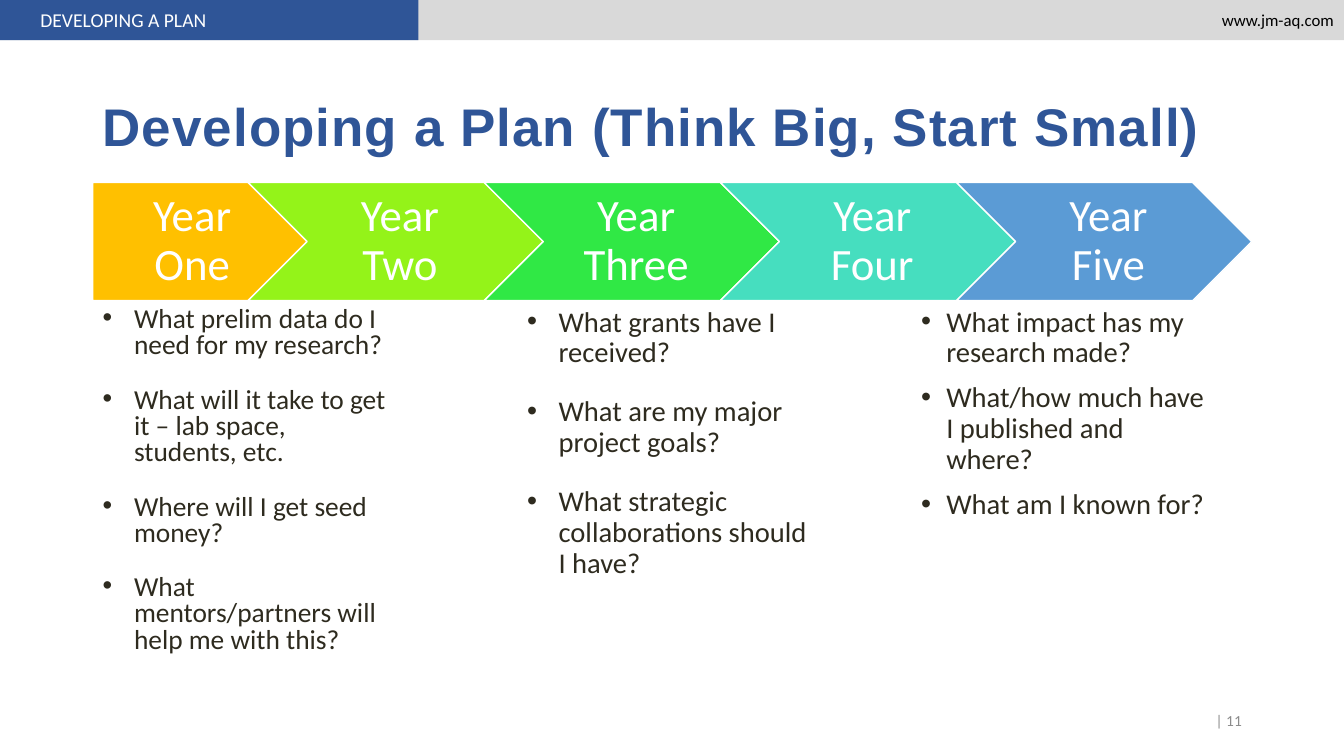
from lxml import etree
from pptx import Presentation
from pptx import util as u
from pptx.dml.color import RGBColor
from pptx.enum import shapes, text
from pptx.oxml.ns import qn

Pt = u.Pt
LEFT, RIGHT, CENTER = text.PP_ALIGN.LEFT, text.PP_ALIGN.RIGHT, text.PP_ALIGN.CENTER
TOP, MIDDLE = text.MSO_ANCHOR.TOP, text.MSO_ANCHOR.MIDDLE
INSETS = (7.2, 3.6, 7.2, 3.6)
NAVY = "2F5597"

SITE = "www.jm-aq.com"
SECTION = "DEVELOPING A PLAN"
TITLE = "Developing a Plan (Think Big, Start Small)"
PAGE = "| 11"
YEARS = [("Year One", "FFC000"), ("Year Two", "94F319"), ("Year Three", "30E845"),
         ("Year Four", "46DEBF"), ("Year Five", "5B9BD5")]
COLUMNS = [
    dict(box=(66.2, 216, 221, 270), size=19.6, spacing=0.8, before=10, indent=22.5, lines=[
        "What prelim data do I need for my research?",
        "What will it take to get it – lab space, students, etc.",
        "Where will I get seed money?",
        "What mentors/partners will help me with this?"]),
    dict(box=(369.4, 216, 221, 211.7), size=20.4, spacing=0.9, before=10, indent=22.5, lines=[
        "What grants have I received?",
        "What are my major project goals?",
        "What strategic collaborations should I have?"]),
    dict(box=(650.9, 216, 221, 182.2), size=20.4, spacing=0.9, before=0, indent=18, lines=[
        "What impact has my research made?",
        "What/how much have I published and where?",
        "What am I known for?"]),
]
ARROW_TOP, ARROW_HEIGHT = 130.4, 84.3
FIRST_LEFT, FIRST_WIDTH = 66.2, 153.2
CHEVRON_LEFT, CHEVRON_WIDTH, PITCH = 177.2, 210.8, 168.7


def color(value):
    return RGBColor.from_string(value)


def add_block(slide, kind, box, fill, line=None):
    shape = slide.shapes.add_shape(kind, *map(Pt, box))
    shape.shadow.inherit = False
    shape.fill.solid()
    shape.fill.fore_color.rgb = color(fill)
    if line:
        shape.line.color.rgb = color(line)
        shape.line.width = Pt(1)
    else:
        shape.line.fill.background()
    return shape


def write(shape, lines, size, ink, align=LEFT, anchor=MIDDLE, insets=INSETS,
          font="Calibri", bold=False, spacing=1.0, before=0, after=0, indent=0):
    frame = shape.text_frame
    frame.word_wrap = True
    frame.vertical_anchor = anchor
    frame.margin_left, frame.margin_top, frame.margin_right, frame.margin_bottom = map(Pt, insets)
    frame.text = "\n".join(lines)
    for index, paragraph in enumerate(frame.paragraphs):
        paragraph.alignment = align
        paragraph.line_spacing = spacing
        paragraph.space_before = Pt(before if index else 0)
        paragraph.space_after = Pt(after)
        if indent:
            properties = paragraph._p.get_or_add_pPr()
            properties.set("marL", str(Pt(indent)))
            properties.set("indent", str(-Pt(indent)))
            etree.SubElement(properties, qn("a:buFont")).set("typeface", "Arial")
            etree.SubElement(properties, qn("a:buChar")).set("char", "•")
        for run in paragraph.runs:
            run.font.name = font
            run.font.size = Pt(size)
            run.font.bold = bold
            run.font.color.rgb = color(ink)


def add_label(slide, box, lines, size, ink, **style):
    label = slide.shapes.add_textbox(*map(Pt, box))
    write(label, lines, size, ink, **style)
    return label


def add_years(slide):
    for index, (year, fill) in enumerate(YEARS):
        if index == 0:
            kind, left, width = shapes.MSO_SHAPE.PENTAGON, FIRST_LEFT, FIRST_WIDTH
            label_left, label_width, inset = left, 132.2, 15
        else:
            kind, width = shapes.MSO_SHAPE.CHEVRON, CHEVRON_WIDTH
            left = CHEVRON_LEFT + (index - 1) * PITCH
            label_left, label_width, inset = left + ARROW_HEIGHT / 2, 126.7, 11
        add_block(slide, kind, (left, ARROW_TOP, width, ARROW_HEIGHT), fill, "FFFFFF")
        add_label(slide, (label_left, ARROW_TOP, label_width, ARROW_HEIGHT), [year], 32, "FFFFFF",
                  align=CENTER, spacing=0.9, insets=(inset, 6.5, 5, 6.5))


def main():
    presentation = Presentation()
    presentation.slide_width, presentation.slide_height = Pt(960), Pt(540)
    slide = presentation.slides.add_slide(presentation.slide_layouts[6])

    rectangle = shapes.MSO_SHAPE.RECTANGLE
    banner = add_block(slide, rectangle, (0, 0, 960, 28.8), "D9D9D9")
    write(banner, [SITE], 12, "000000", align=RIGHT)
    section = add_block(slide, rectangle, (0, 0, 298.8, 28.8), NAVY)
    write(section, [SECTION], 14, "FFFFFF", insets=(28.8, 3.6, 7.2, 3.6))

    title = add_label(slide, (66.2, 37.4, 828, 104.4), [TITLE], 37.8, NAVY, font="Arial", bold=True)
    title.text_frame.paragraphs[0].runs[0].font._element.set("spc", "80")

    add_years(slide)
    for column in COLUMNS:
        add_label(slide, column["box"], column["lines"], column["size"], "2E2B1F", anchor=TOP,
                  spacing=column["spacing"], before=column["before"], after=10,
                  indent=column["indent"])
    add_label(slide, (678.2, 500.4, 216, 28.8), [PAGE], 11, "8C8C8C", align=RIGHT)

    presentation.save("out.pptx")


if __name__ == "__main__":
    main()
